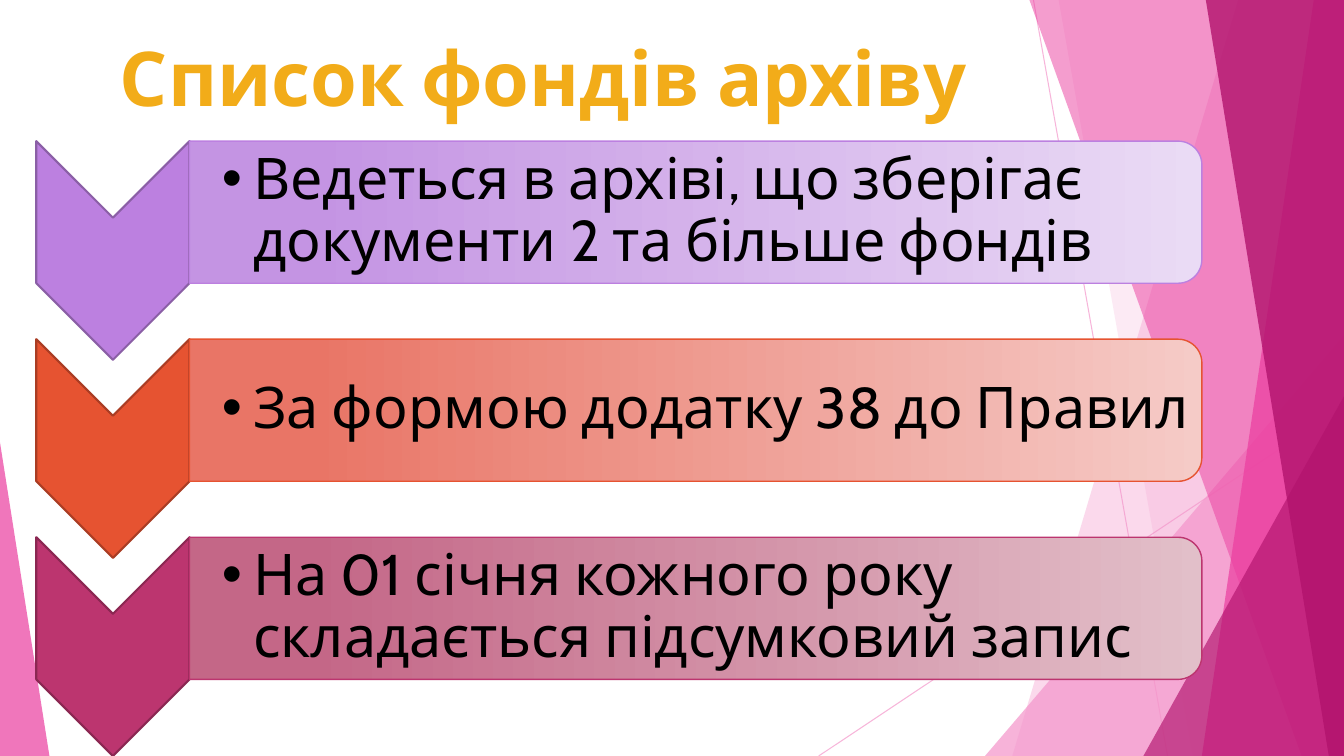
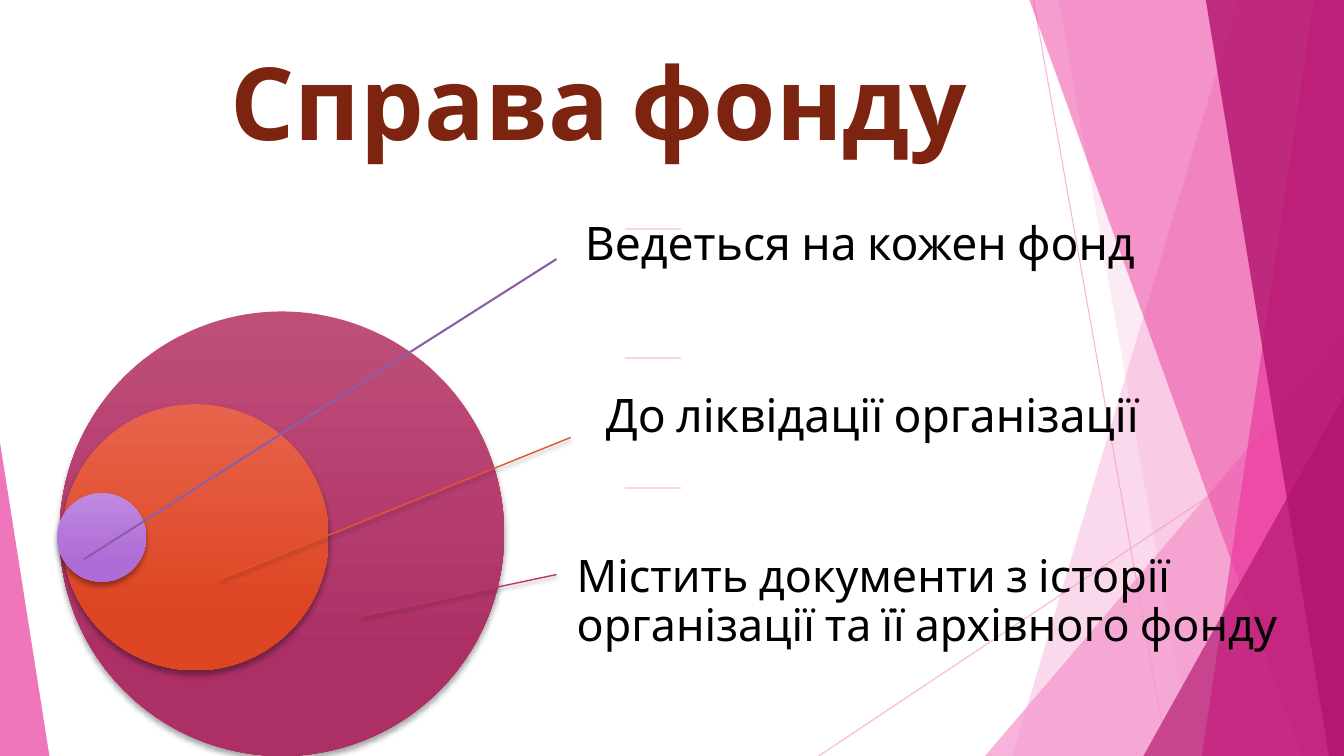
from lxml import etree
from pptx import Presentation
from pptx.dml.color import RGBColor
from pptx.enum import shapes as kinds, text as layout
from pptx.oxml import ns
from pptx.util import Inches, Pt

SHAPE = kinds.MSO_SHAPE
FONT = "Cabin"
BLACK = "000000"
PINK, MAGENTA, BERRY, PALE_PINK = "F496CB", "EB3D9F", "B2136D", "FAD3E7"
WIDTH, HEIGHT = 13.33, 7.5

# Background facets from back to front.
# A band is (top x, bottom x); a triangle is (left, top, width, height, apex).
FACETS = [
    ((12.28, 10.04), PINK, 36),
    ((10.5, 11.83), PINK, 20),
    ((9.77, 3.33, 3.56, 4.17, 1), PINK, 72),
    ((10.21, 12.91), MAGENTA, 50),
    ((13.03, 11.92), MAGENTA, 70),
    ((11.96, 13.18), BERRY, 80),
    ((11.34, 3.93, 1.99, 3.57, 1), BERRY, 66),
    ((0, 4.39, 0.49, 3.11, 0), MAGENTA, 70),
]


def rgb(colour):
    return RGBColor.from_string(colour)


def child(parent, tag, **attributes):
    element = etree.SubElement(parent, ns.qn(tag))
    for key, value in attributes.items():
        element.set(key, str(value))
    return element


def set_opacity(properties, percent):
    for colour in properties.iter(ns.qn("a:srgbClr")):
        child(colour, "a:alpha", val=percent * 1000)


def drop_shadow(effects, blur, distance):
    shadow = child(effects, "a:outerShdw", blurRad=Pt(blur), dist=Pt(distance),
                   dir=90 * 60000, rotWithShape=0)
    child(child(shadow, "a:srgbClr", val=BLACK), "a:alpha", val=35000)


class Deck:
    def __init__(self):
        self.presentation = Presentation()
        self.presentation.slide_width = Inches(WIDTH)
        self.presentation.slide_height = Inches(HEIGHT)
        self.slide = None

    def new_slide(self):
        """Start a slide with the shared faceted background."""
        self.slide = self.presentation.slides.add_slide(
            self.presentation.slide_layouts[6])
        self.line((10.25, 0), (11.58, HEIGHT), PINK, 0.75, opacity=70)
        self.line((WIDTH, 4.03), (8.12, HEIGHT), PINK, 0.75, opacity=70)
        for outline, colour, opacity in FACETS:
            facet = self.band(*outline) if len(outline) == 2 else self.triangle(*outline)
            self.paint(facet, colour)
            set_opacity(facet.element.spPr, opacity)

    def band(self, top_x, bottom_x):
        """Outline reaching from a slanted left edge to the slide's right edge."""
        corners = [(Inches(x), Inches(y)) for x, y in
                   ((WIDTH, 0), (WIDTH, HEIGHT), (bottom_x, HEIGHT))]
        builder = self.slide.shapes.build_freeform(Inches(top_x), 0)
        builder.add_line_segments(corners, close=True)
        return builder.convert_to_shape()

    def triangle(self, left, top, width, height, apex):
        shape = self.shape(SHAPE.ISOSCELES_TRIANGLE, left, top, width, height)
        shape.adjustments[0] = apex
        return shape

    def shape(self, preset, left, top, width, height):
        return self.slide.shapes.add_shape(
            preset, Inches(left), Inches(top), Inches(width), Inches(height))

    def turned(self, preset, centre_x, centre_y, width, height):
        """Shape turned by 90 degrees; width and height are as seen."""
        shape = self.shape(preset, centre_x - height / 2, centre_y - width / 2,
                           height, width)
        shape.rotation = 90
        return shape

    def paint(self, shape, fill, line=None, line_width=1):
        """Fill with one colour, or with (top, bottom, bottom position)."""
        shape.shadow.inherit = False
        if isinstance(fill, str):
            shape.fill.solid()
            shape.fill.fore_color.rgb = rgb(fill)
        else:
            top, bottom, position = fill
            shape.fill.gradient()
            shape.fill.gradient_angle = 270
            first, last = shape.fill.gradient_stops
            first.color.rgb, first.position = rgb(top), 0
            last.color.rgb, last.position = rgb(bottom), position
        if line:
            shape.line.color.rgb = rgb(line)
            shape.line.width = Pt(line_width)
        else:
            shape.line.fill.background()

    def circle(self, left, top, size, gradient):
        shape = self.shape(SHAPE.OVAL, left, top, size, size)
        self.paint(shape, gradient)
        drop_shadow(shape.element.spPr.find(ns.qn("a:effectLst")), 4, 3)

    def line(self, start, end, colour, width, opacity=None, shadow=False):
        connector = self.slide.shapes.add_connector(
            kinds.MSO_CONNECTOR.STRAIGHT, *(Inches(v) for v in (*start, *end)))
        connector.line.color.rgb = rgb(colour)
        connector.line.width = Pt(width)
        properties = connector.element.spPr
        if opacity:
            set_opacity(properties, opacity)
        effects = child(properties, "a:effectLst")
        if shadow:
            drop_shadow(effects, 3, 2)

    def text(self, words, box, size, colour=BLACK, inset=0.1, margin=0.05):
        """Add vertically centred text and return its paragraph."""
        frame = self.slide.shapes.add_textbox(*(Inches(v) for v in box)).text_frame
        frame.word_wrap = True
        frame.vertical_anchor = layout.MSO_ANCHOR.MIDDLE
        frame.margin_left = Inches(inset)
        frame.margin_top = frame.margin_right = frame.margin_bottom = Inches(margin)
        paragraph = frame.paragraphs[0]
        paragraph.text = words
        paragraph.font.name = FONT
        paragraph.font.size = Pt(size)
        paragraph.font.color.rgb = rgb(colour)
        return paragraph

    def title(self, words, box, size, colour):
        paragraph = self.text(words, box, size, colour, inset=0.05)
        paragraph.alignment = layout.PP_ALIGN.CENTER
        paragraph.font.bold = True

    def body(self, words, box, size, inset, margin, bullet=False):
        paragraph = self.text(words, box, size, inset=inset, margin=margin)
        paragraph.line_spacing = 0.9
        if bullet:
            properties = paragraph._p.get_or_add_pPr()
            properties.set("marL", str(Inches(0.31)))
            properties.set("indent", str(-Inches(0.31)))
            child(properties, "a:buFont", typeface="Arial")
            child(properties, "a:buChar", char="•")
            # Bullet settings come before the default run properties.
            defaults = properties.find(ns.qn("a:defRPr"))
            if defaults is not None:
                properties.append(defaults)


def fund_list(deck):
    deck.new_slide()
    deck.title("Список фондів архіву", (0.69, 0.21, 9.4, 1.09), 54, "F2AC19")
    rules = [
        ("Ведеться в архіві, що зберігає документи 2 та більше фондів",
         "BC80E0", "8B5FA6", "EADBF5", "C494E3"),
        ("За формою додатку 38 до Правил",
         "E65331", "AA3D24", "F5CBC7", "E97566"),
        ("На 01 січня кожного року складається підсумковий запис",
         "BC356F", "8B2752", "E2BFC9", "C46787"),
    ]
    first_top, stack_span = 1.4, 3.93
    bar_height, chevron_height = 1.41, 2.17
    for index, (words, colour, edge, pale, strong) in enumerate(rules):
        top = first_top + stack_span * index / (len(rules) - 1)
        middle = top + bar_height / 2
        chevron = deck.turned(SHAPE.CHEVRON, 1.12, top + chevron_height / 2,
                              1.52, chevron_height)
        deck.paint(chevron, colour, edge, 1.5)
        bar = deck.turned(SHAPE.ROUND_2_SAME_RECTANGLE, 6.9, middle, 10.04, bar_height)
        deck.paint(bar, (pale, strong, 0.88), colour)
        deck.body(words, (1.88, middle - 0.64, 9.97, 1.27), 41, 0.32, 0.03, bullet=True)


def fund_file(deck):
    deck.new_slide()
    deck.title("Справа фонду", (0.36, 0.27, 11.16, 1.44), 72, "7C240F")
    for left, top, size, light, dark in (
            (0.59, 3.09, 4.41, "BF4E79", "AC3066"),
            (0.62, 4.01, 2.64, "E7634C", "DE4522"),
            (0.57, 4.89, 0.88, "BF88E1", "AE6DD6")):
        deck.circle(left, top, size, (light, dark, 0.78))

    facts = [
        ("Ведеться на кожен фонд", (5.54, 1.79, 6.92, 1.29), 33, 0.26,
         (5.52, 2.57), (0.83, 5.55), "8B5FA6", 1.5, False),
        ("До ліквідації організації", (5.75, 3.5, 6.53, 1.29), 33, 0.26,
         (5.66, 4.34), (2.19, 5.74), "E65331", 1, True),
        ("Містить документи з історії організації та її архівного фонду",
         (5.47, 5.33, 7.45, 1.29), 32, 0.25,
         (5.52, 5.7), (3.58, 6.11), "BC356F", 1, True),
    ]
    for index, (words, box, size, inset, start, end, colour, width, shadow) in enumerate(facts):
        deck.body(words, box, size, inset, 0.05)
        dash_y = 2.27 + 2.57 * index / (len(facts) - 1)
        deck.line((6.2, dash_y), (6.75, dash_y), PALE_PINK, 1.5)
        deck.line(start, end, colour, width, shadow=shadow)


def main():
    deck = Deck()
    fund_list(deck)
    fund_file(deck)
    deck.presentation.save("out.pptx")


if __name__ == "__main__":
    main()
